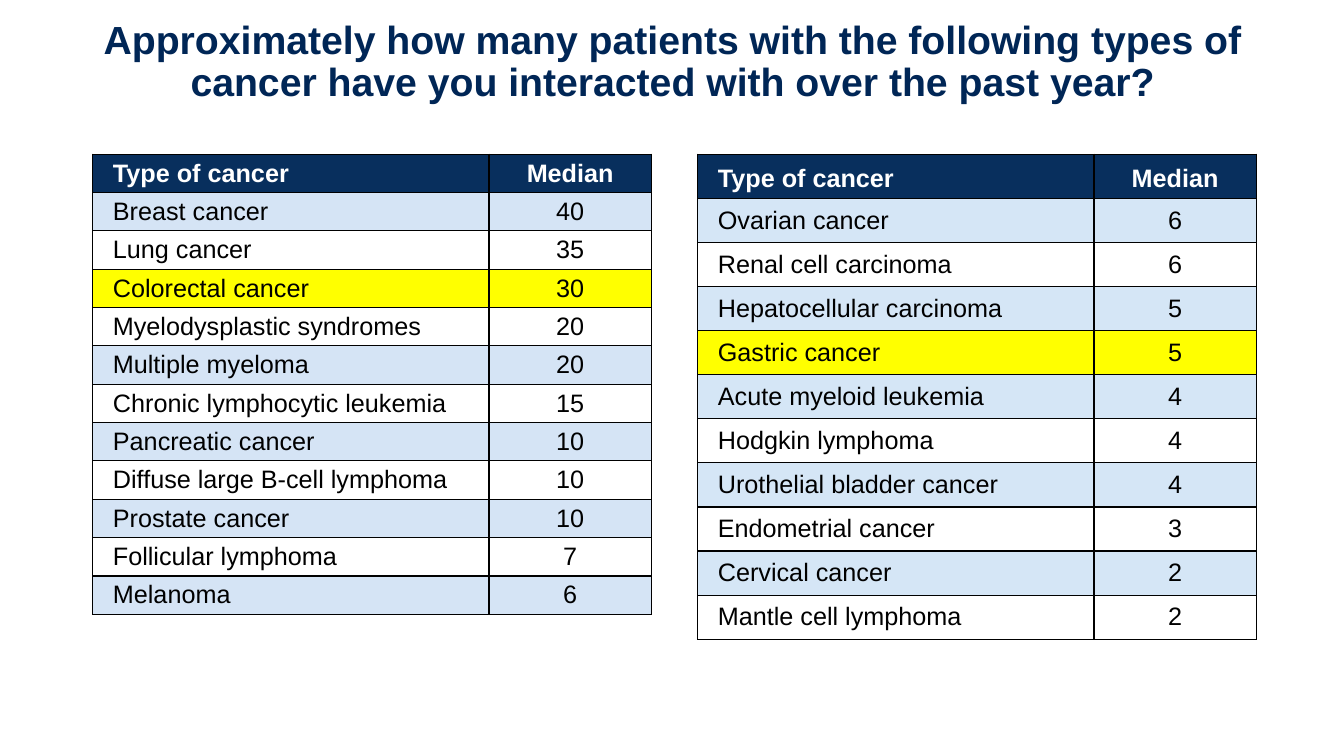
from lxml.etree import SubElement
from pptx import Presentation
from pptx.dml.color import RGBColor
from pptx.enum.text import MSO_ANCHOR as Anchor, PP_ALIGN as Align
from pptx.oxml.ns import qn
from pptx.util import Inches, Pt

NAVY = RGBColor(0x00, 0x26, 0x56)
HEADER = RGBColor(0x08, 0x2F, 0x5D)
BLUE_TINT = RGBColor(0xD5, 0xE4, 0xF5)
SKY_TINT = RGBColor(0xD5, 0xE6, 0xF6)
YELLOW = RGBColor(0xFF, 0xFF, 0x00)
WHITE = RGBColor(0xFF, 0xFF, 0xFF)
BLACK = RGBColor(0x00, 0x00, 0x00)

HEADINGS = ("Type of cancer", "Median")
COMMON_CANCERS = [
    ("Breast cancer", 40),
    ("Lung cancer", 35),
    ("Colorectal cancer", 30),
    ("Myelodysplastic syndromes", 20),
    ("Multiple myeloma", 20),
    ("Chronic lymphocytic leukemia", 15),
    ("Pancreatic cancer", 10),
    ("Diffuse large B-cell lymphoma", 10),
    ("Prostate cancer", 10),
    ("Follicular lymphoma", 7),
    ("Melanoma", 6),
]
RARER_CANCERS = [
    ("Ovarian cancer", 6),
    ("Renal cell carcinoma", 6),
    ("Hepatocellular carcinoma", 5),
    ("Gastric cancer", 5),
    ("Acute myeloid leukemia", 4),
    ("Hodgkin lymphoma", 4),
    ("Urothelial bladder cancer", 4),
    ("Endometrial cancer", 3),
    ("Cervical cancer", 2),
    ("Mantle cell lymphoma", 2),
]
HIGHLIGHTED = {"Colorectal cancer", "Gastric cancer"}


class SlideBuilder:
    """Places elements on a grid of half-inch columns and quarter-inch rows."""

    FONT = "Arial"
    MARGIN = Inches(0.92)
    COL = Inches(0.5)
    ROW = Inches(0.25)
    TABLE_COLS = (7.86, 3.22)

    def __init__(self, prs):
        self.s = prs.slides.add_slide(prs.slide_layouts[5])

    def x(self, col):
        return self.MARGIN + self.w(col)

    def w(self, cols):
        return round(cols * self.COL)

    def h(self, rows):
        return round(rows * self.ROW)

    def style(self, p, size, color, bold, align):
        p.alignment = align
        p.font.name = self.FONT
        p.font.size = Pt(size)
        p.font.bold = bold
        p.font.color.rgb = color

    def title(self, text, cols, rows):
        sp = self.s.shapes.title
        sp.left, sp.top = self.x(0), 0
        sp.width, sp.height = self.w(cols), self.h(rows)
        tf = sp.text_frame
        tf.text = text
        tf.word_wrap = True
        tf.vertical_anchor = Anchor.MIDDLE
        p = tf.paragraphs[0]
        p.line_spacing = 0.9
        self.style(p, 28, NAVY, True, Align.CENTER)

    def border(self, cell):
        """Draw a 1 pt black line on each side, ahead of the cell's fill."""
        tcPr = cell._tc.get_or_add_tcPr()
        for i, side in enumerate(("lnL", "lnR", "lnT", "lnB")):
            ln = SubElement(tcPr, qn(f"a:{side}"), w=str(Pt(1)))
            fill = SubElement(ln, qn("a:solidFill"))
            SubElement(fill, qn("a:srgbClr"), val=str(BLACK))
            tcPr.insert(i, ln)

    def cell(self, cell, text, fill, is_header, align):
        cell.text = str(text)
        cell.margin_left = cell.margin_right = Inches(0.2)
        cell.margin_top = cell.margin_bottom = Inches(0.05)
        cell.vertical_anchor = Anchor.BOTTOM if is_header else Anchor.MIDDLE
        cell.fill.solid()
        cell.fill.fore_color.rgb = fill
        self.border(cell)
        color = WHITE if is_header else BLACK
        self.style(cell.text_frame.paragraphs[0], 18, color, is_header, align)

    def table(self, col, row, row_height, records, tint):
        lines = [HEADINGS, *records]
        frame = self.s.shapes.add_table(
            len(lines), len(HEADINGS), self.x(col), self.h(row),
            self.w(sum(self.TABLE_COLS)), self.h(row_height * len(lines)))
        tbl = frame.table
        for column, cols in zip(tbl.columns, self.TABLE_COLS):
            column.width = self.w(cols)
        for r, line in enumerate(lines):
            tbl.rows[r].height = self.h(row_height)
            if r == 0:
                fill = HEADER
            elif line[0] in HIGHLIGHTED:
                fill = YELLOW
            else:
                fill = tint if r % 2 else WHITE
            for c, align in enumerate((Align.LEFT, Align.CENTER)):
                self.cell(tbl.cell(r, c), line[c], fill, r == 0, align)


def main():
    prs = Presentation()
    prs.slide_width, prs.slide_height = Inches(13.33), Inches(7.5)
    b = SlideBuilder(prs)
    b.title("Approximately how many patients with the following types of "
            "cancer have you interacted with over the past year?", 23, 5)
    b.table(0, 6.12, 1.52, COMMON_CANCERS, BLUE_TINT)
    b.table(12, 6.12, 1.75, RARER_CANCERS, SKY_TINT)
    prs.save("out.pptx")


if __name__ == "__main__":
    main()
